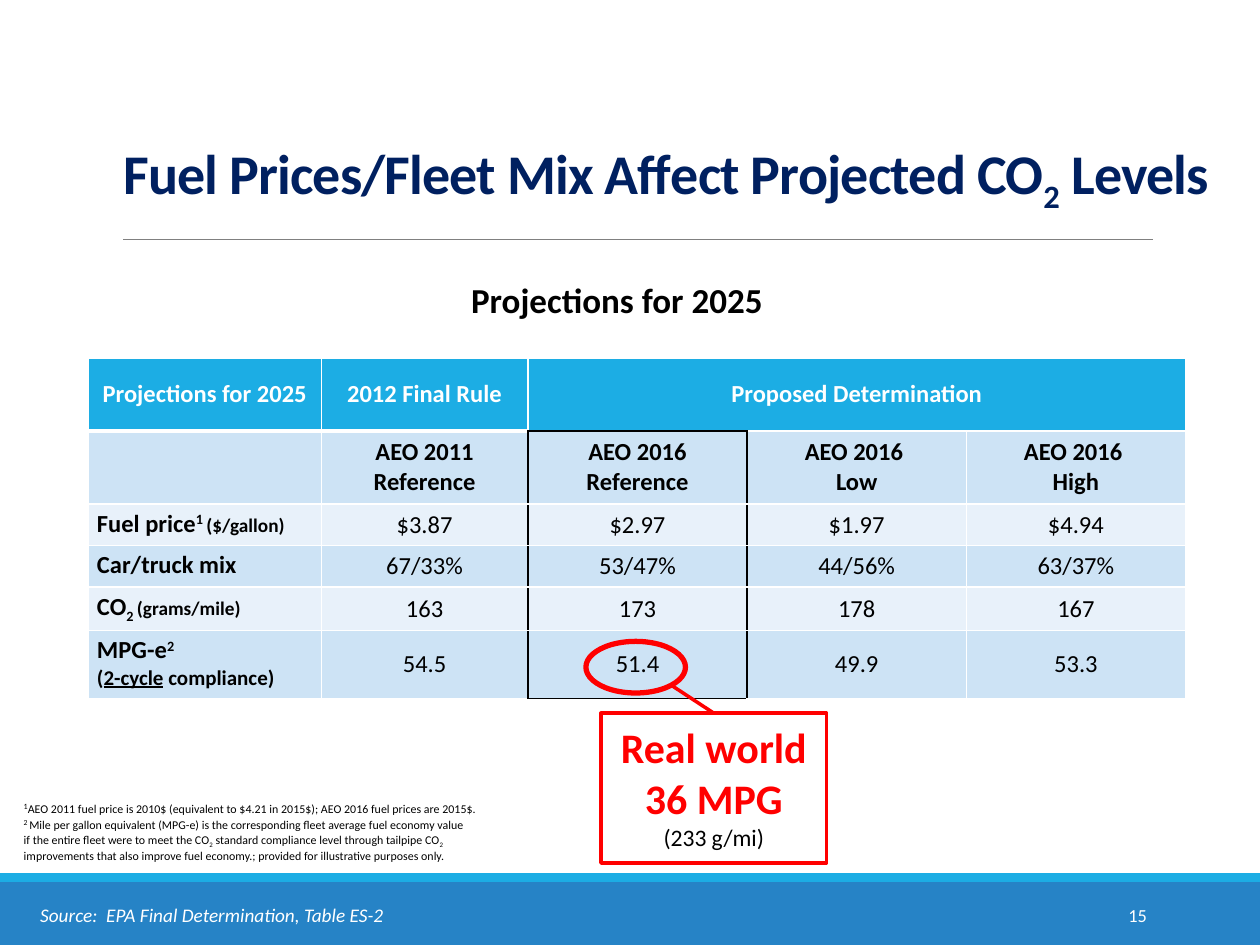
from typing import NamedTuple, Optional

from lxml.etree import SubElement
from pptx import Presentation
from pptx.dml.color import RGBColor
from pptx.enum.shapes import MSO_CONNECTOR as CONN, MSO_SHAPE as SHAPE
from pptx.enum.text import MSO_ANCHOR as ANCHOR, MSO_AUTO_SIZE as FIT, PP_ALIGN as ALIGN
from pptx.oxml.ns import qn
from pptx.util import Inches, Pt

FONT = "Calibri"
WHITE = RGBColor(0xFF, 0xFF, 0xFF)
BLACK = RGBColor(0, 0, 0)
RED = RGBColor(0xFF, 0, 0)
NAVY = RGBColor(0x00, 0x20, 0x60)
BLUE = RGBColor(0x26, 0x83, 0xC6)
CYAN = RGBColor(0x1C, 0xAD, 0xE4)
GRAY = RGBColor(0x80, 0x80, 0x80)
BANDS = (RGBColor(0xE8, 0xF1, 0xFA), RGBColor(0xCD, 0xE3, 0xF5))

# The slide is a grid of 100 columns by 75 rows
WIDTH, HEIGHT = Inches(10), Inches(7.5)
COL, ROW = WIDTH / 100, HEIGHT / 75


class Box(NamedTuple):
    col: float
    row: float
    cols: float
    rows: float

    def emu(self) -> tuple:
        return (round(self.col * COL), round(self.row * ROW),
                round(self.cols * COL), round(self.rows * ROW))


class Run(NamedTuple):
    text: str
    size: float = 14
    color: RGBColor = BLACK
    bold: bool = False
    base: int = 0
    underline: bool = False
    italic: bool = False
    spacing: int = 0


class Line(NamedTuple):
    start: tuple
    end: tuple
    color: RGBColor
    width: float


def write(tf, paragraphs: list, align=ALIGN.LEFT) -> None:
    for i, runs in enumerate(paragraphs):
        p = tf.add_paragraph() if i else tf.paragraphs[0]
        p.alignment = align
        for run in runs:
            r = p.add_run()
            r.text = run.text
            f = r.font
            f.name, f.size, f.bold = FONT, Pt(run.size), run.bold
            f.italic, f.underline = run.italic, run.underline
            f.color.rgb = run.color
            if run.base:
                f._element.set("baseline", str(run.base * 1000))
            if run.spacing:
                f._element.set("spc", str(run.spacing))


def add_shape(s, kind, box: Box, fill: Optional[RGBColor] = None,
              line: Optional[RGBColor] = None, width: float = 1):
    sp = s.shapes.add_shape(kind, *box.emu())
    sp.shadow.inherit = False
    if fill is None:
        sp.fill.background()
    else:
        sp.fill.solid()
        sp.fill.fore_color.rgb = fill
    if line is None:
        sp.line.fill.background()
    else:
        sp.line.color.rgb, sp.line.width = line, Pt(width)
    return sp


def add_line(s, line: Line):
    (x1, y1), (x2, y2) = line.start, line.end
    cx = s.shapes.add_connector(CONN.STRAIGHT, round(x1 * COL), round(y1 * ROW),
                                round(x2 * COL), round(y2 * ROW))
    cx.line.color.rgb, cx.line.width = line.color, Pt(line.width)
    SubElement(cx._element.spPr, qn("a:effectLst"))
    return cx


def add_text(s, box: Box, paragraphs: list, align=ALIGN.LEFT,
             anchor=ANCHOR.TOP, wrap: bool = True) -> None:
    tf = s.shapes.add_textbox(*box.emu()).text_frame
    tf.word_wrap, tf.vertical_anchor = wrap, anchor
    write(tf, paragraphs, align)


def set_border(cell, side: str, color: RGBColor, width: float) -> None:
    ln = SubElement(cell._tc.get_or_add_tcPr(), qn("a:ln" + side), w=str(Pt(width)))
    SubElement(SubElement(ln, qn("a:solidFill")), qn("a:srgbClr"), val=str(color))


# Table contents
HEADERS = ["Projections for 2025", "2012 Final Rule", "Proposed Determination"]
CASES = [[], ["AEO 2011 Reference"], ["AEO 2016", "Reference"],
         ["AEO 2016 ", "Low"], ["AEO 2016 ", "High"]]
LABELS = [
    [[Run("Fuel price", bold=True), Run("1 ", bold=True, base=30),
      Run("($/gallon)", 11, bold=True)]],
    [[Run("Car/truck mix", bold=True)]],
    [[Run("CO", bold=True), Run("2 ", bold=True, base=-25),
      Run("(grams/mile)", 11, bold=True)]],
    [[Run("MPG-e", bold=True), Run("2", bold=True, base=30)],
     [Run("(", 12, bold=True), Run("2-cycle", 12, bold=True, underline=True),
      Run(" compliance)", 12, bold=True)]],
]
VALUES = [["$3.87", "$2.97", "$1.97", "$4.94"],
          ["67/33%", "53/47%", "44/56%", "63/37%"],
          ["163", "173", "178", "167"],
          ["54.5", "51.4", "49.9", "53.3"]]
COL_SPANS = [18.5, 16.4, 17.4, 17.4, 17.4]
ROW_SPANS = [5.8, 5.8, 3.3, 3.3, 3.3, 5.4]
FOCUS = 2  # column outlined in black


def cell_borders(row: int, col: int) -> dict:
    last = len(ROW_SPANS) - 1
    body, focus = row > 0, col == FOCUS
    black = {"L": body and col in (FOCUS, FOCUS + 1),
             "R": body and col in (FOCUS - 1, FOCUS),
             "T": focus and row == 1,
             "B": focus and row in (0, last)}
    return {side: (BLACK if on else WHITE,
                   3 if side == "B" and not body and col < FOCUS else 1)
            for side, on in black.items()}


def cell_text(row: int, col: int) -> list:
    if row == 0:
        return [[Run(HEADERS[col], color=WHITE, bold=True)]] if col < len(HEADERS) else []
    if row == 1:
        return [[Run(text, bold=True)] for text in CASES[col]]
    return LABELS[row - 2] if col == 0 else [[Run(VALUES[row - 2][col - 1])]]


def add_projection_table(s) -> None:
    box = Box(7, 28.4, sum(COL_SPANS), sum(ROW_SPANS))
    table = s.shapes.add_table(len(ROW_SPANS), len(COL_SPANS), *box.emu()).table
    for column, span in zip(table.columns, COL_SPANS):
        column.width = round(span * COL)
    for tr, span in zip(table.rows, ROW_SPANS):
        tr.height = round(span * ROW)
    table.cell(0, FOCUS).merge(table.cell(0, len(COL_SPANS) - 1))
    for row in range(len(ROW_SPANS)):
        for col in range(len(COL_SPANS)):
            cell = table.cell(row, col)
            label = row > 1 and col == 0
            cell.margin_left = cell.margin_right = Inches(0.07)
            cell.margin_top = cell.margin_bottom = Inches(0.04)
            cell.vertical_anchor = ANCHOR.TOP if label else ANCHOR.MIDDLE
            for side, (color, width) in cell_borders(row, col).items():
                set_border(cell, side, color, width)
            cell.fill.solid()
            cell.fill.fore_color.rgb = BANDS[row % 2] if row else CYAN
            write(cell.text_frame, cell_text(row, col),
                  ALIGN.LEFT if label else ALIGN.CENTER)


prs = Presentation()
prs.slide_width, prs.slide_height = WIDTH, HEIGHT
s = prs.slides.add_slide(prs.slide_layouts[5])

# Footer bands and title rule
add_shape(s, SHAPE.RECTANGLE, Box(0, 70, 100, 5), BLUE)
add_shape(s, SHAPE.RECTANGLE, Box(0, 69.3, 100, 0.7), CYAN)
add_line(s, Line((9.8, 19), (91.5, 19), GRAY, 0.5))

# Title
title = s.shapes.title
title.left, title.top, title.width, title.height = Box(8.8, 5.1, 89.7, 11.9).emu()
tf = title.text_frame
tf.auto_size, tf.vertical_anchor = FIT.NONE, ANCHOR.BOTTOM
write(tf, [[Run(text, 32, NAVY, True, base, spacing=-50) for text, base in
            (("Fuel Prices/Fleet Mix Affect Projected CO", 0), ("2", -25), (" Levels", 0))]])
tf.paragraphs[0].line_spacing = 0.85

# Table and its heading
add_projection_table(s)
add_text(s, Box(36.4, 21.6, 34.6, 4.4), [[Run("Projections for 2025", 20, bold=True)]])

# Real-world callout
add_shape(s, SHAPE.OVAL, Box(46.5, 50.9, 7.9, 4.1), line=RED, width=3)
callout = add_shape(s, SHAPE.RECTANGLE, Box(47.7, 56.6, 17.9, 11.9), line=RED, width=2)
tf = callout.text_frame
tf.word_wrap, tf.vertical_anchor = False, ANCHOR.TOP
tf.margin_left = tf.margin_right = Inches(0.15)
tf.margin_top = tf.margin_bottom = Inches(0.07)
write(tf, [[Run("Real world", 24, RED, True)], [Run("36 MPG", 24, RED, True)],
           [Run("(233 g/mi)", 13.5)]], ALIGN.CENTER)
leader = add_line(s, Line((53.3, 54.4), (56.7, 56.6), RED, 2))
leader.end_connect(callout, 0)

# Footnotes
NOTE = 6.8
add_text(s, Box(0.9, 63, 39.7, 7.8), [
    [Run("1", 7.9, base=30),
     Run("AEO 2011 fuel price is 2010$ (equivalent to $4.21 in 2015$); "
         "AEO 2016 fuel prices are 2015$.", NOTE)],
    [Run("2 ", 7.5, base=30),
     Run("Mile per gallon equivalent (MPG-e) is the corresponding fleet "
         "average fuel economy value", NOTE)],
    [Run("if the entire fleet were to meet the CO", NOTE), Run("2", NOTE, base=-25),
     Run(" standard compliance level through tailpipe CO", NOTE), Run("2", NOTE, base=-25),
     Run(" improvements that also improve fuel economy.; provided for "
         "illustrative purposes only.", NOTE)],
])

# Footer text
add_text(s, Box(2.2, 71.2, 29.9, 2.9),
         [[Run("Source:  EPA Final Determination, Table ES-2", 11, WHITE, italic=True)]],
         wrap=False)
add_text(s, Box(81.2, 70.6, 10.8, 4), [[Run("15", 10.5, WHITE)]],
         ALIGN.RIGHT, ANCHOR.MIDDLE)

prs.save("out.pptx")
